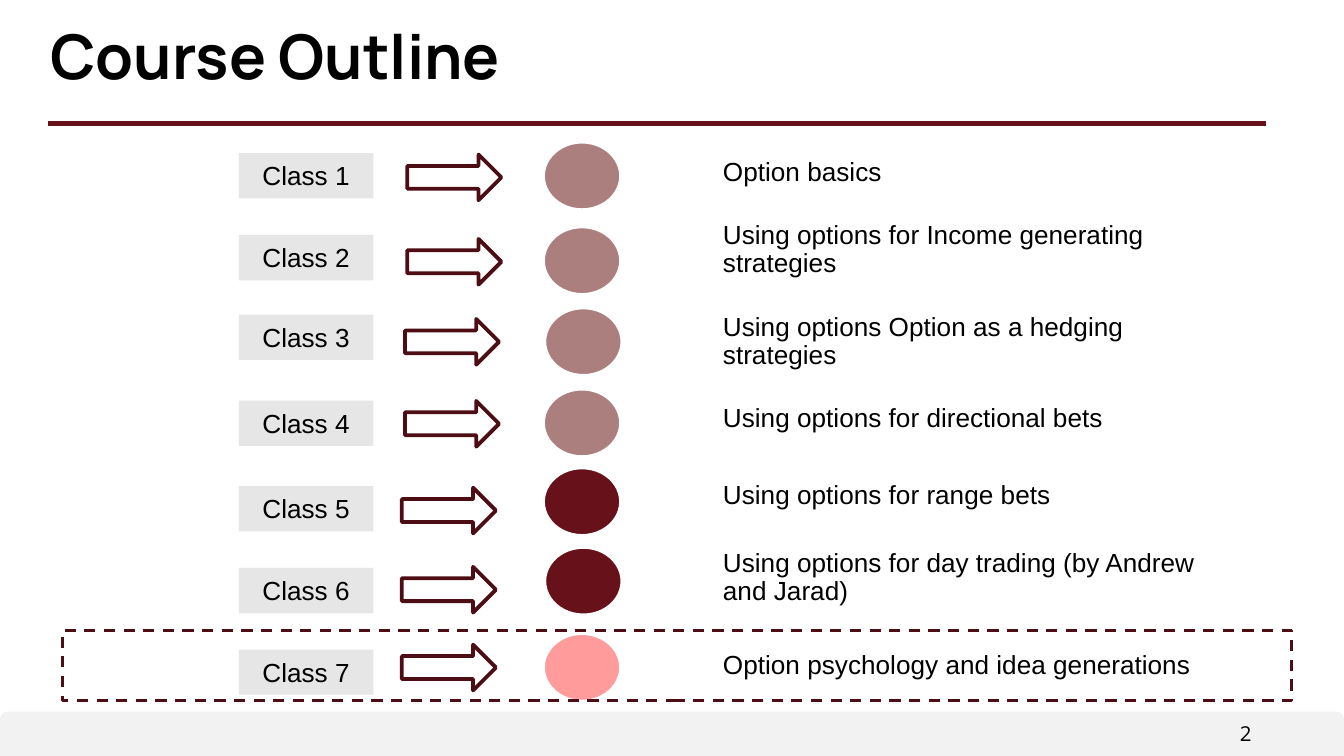
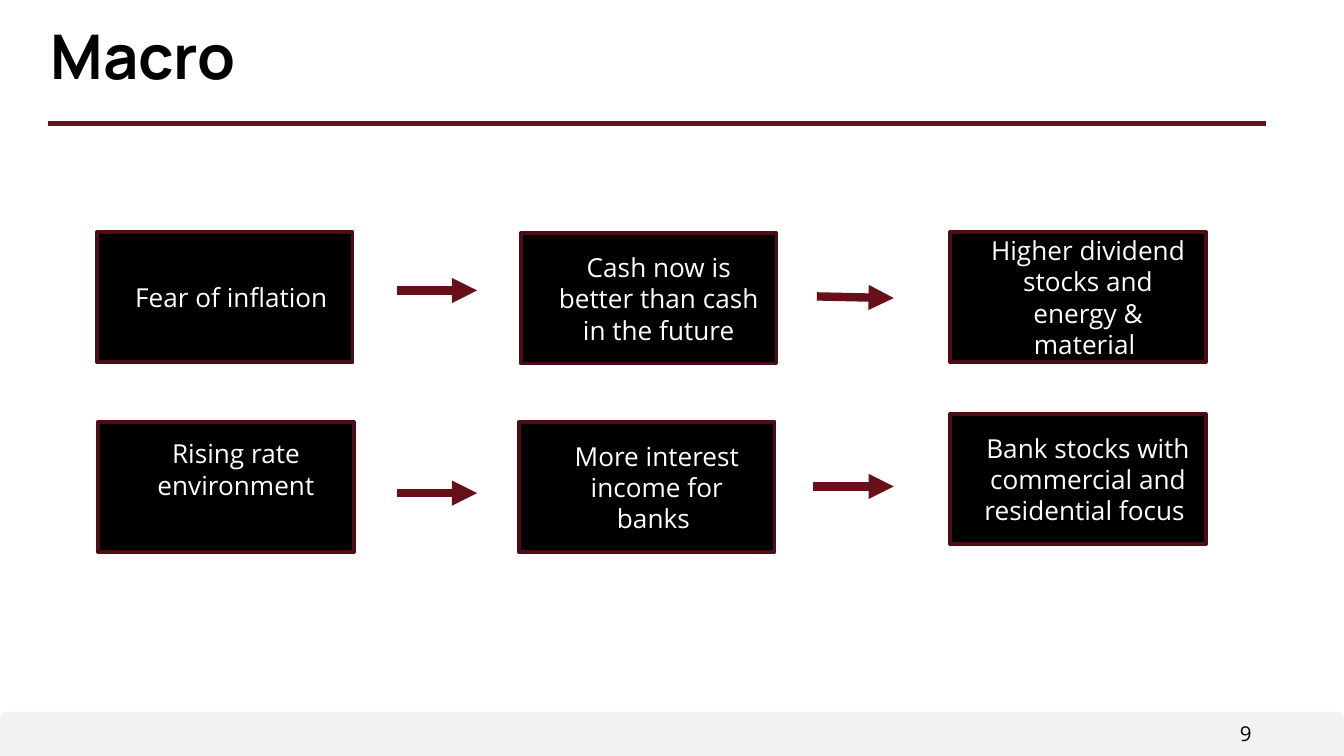
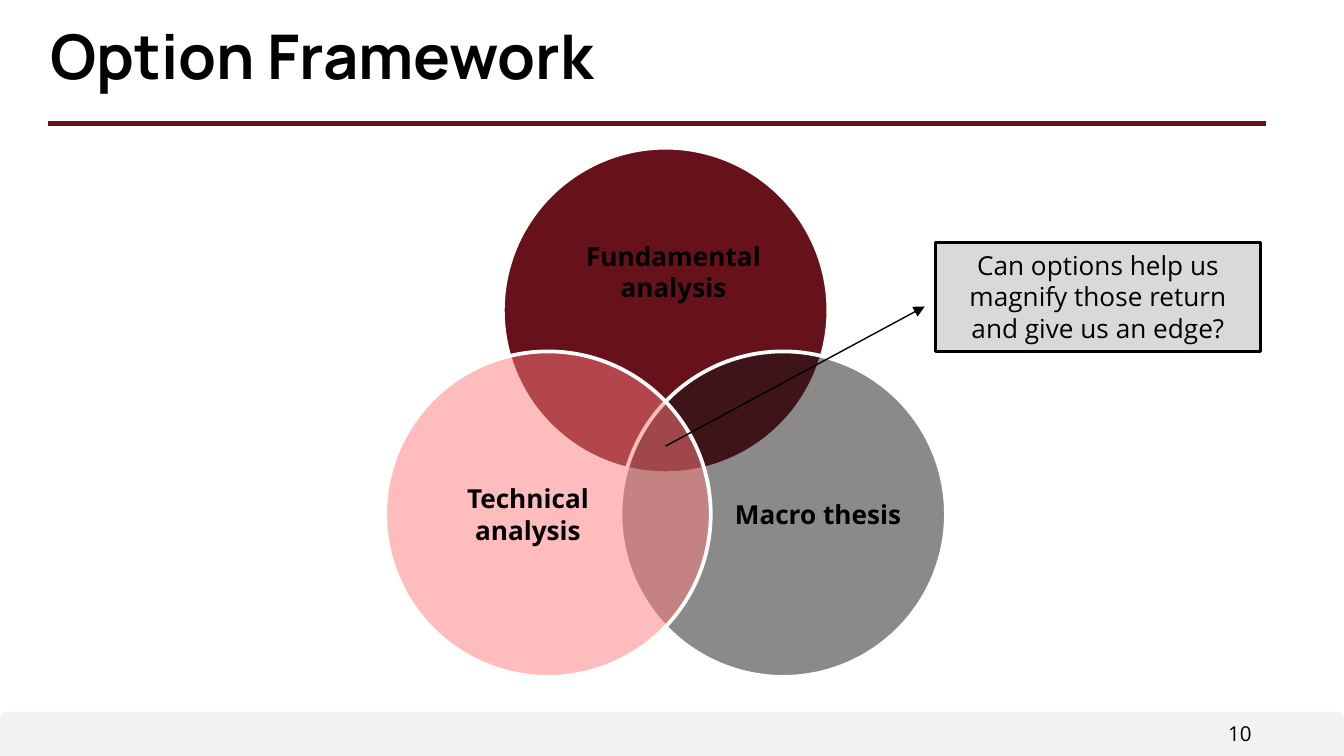
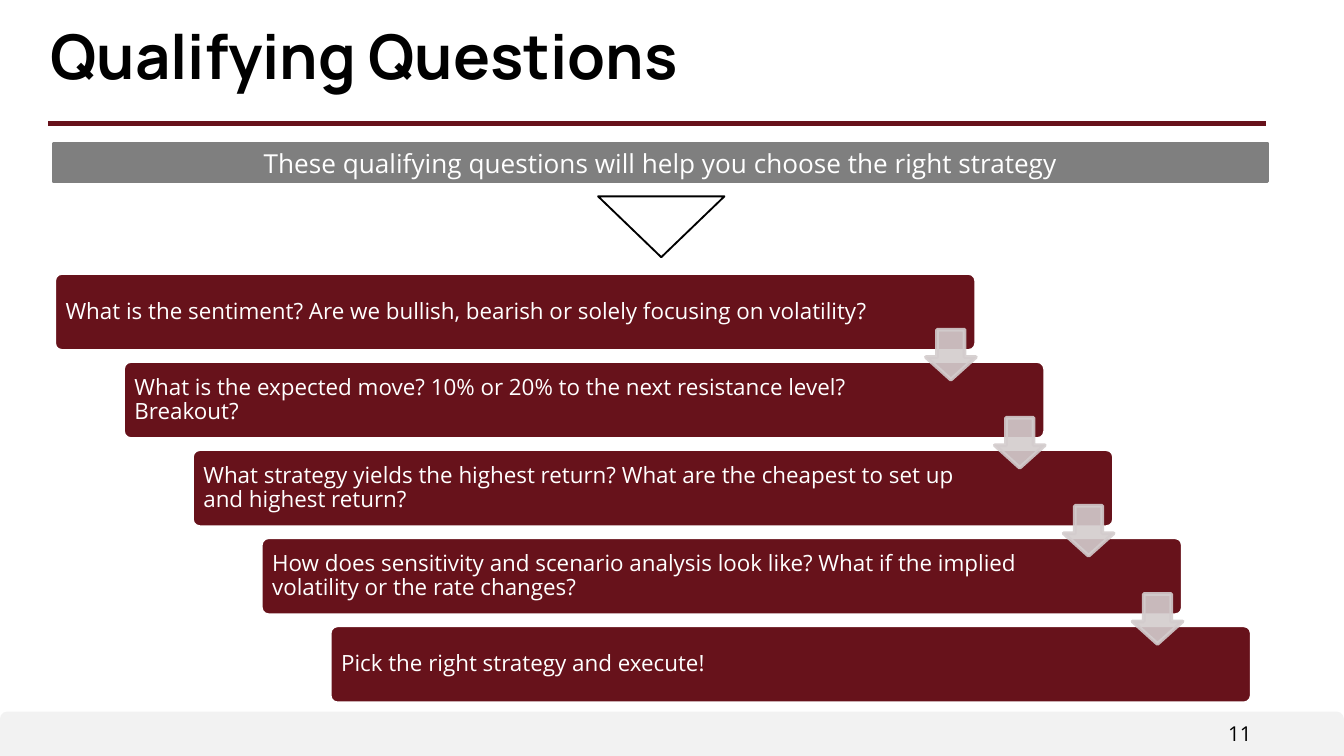
from dataclasses import dataclass
from math import cos, radians, sin

from pptx import Presentation
from pptx.dml.color import RGBColor
from pptx.enum.dml import MSO_LINE
from pptx.enum.shapes import MSO_CONNECTOR, MSO_SHAPE
from pptx.enum.text import MSO_ANCHOR, PP_ALIGN
from pptx.oxml.ns import qn
from pptx.util import Pt
from lxml.etree import SubElement


@dataclass(frozen=True)
class Theme:
    black: str = "000000"
    white: str = "FFFFFF"
    maroon: str = "67121B"
    dark_maroon: str = "4C0D14"
    arrow_maroon: str = "671019"
    oxblood: str = "5A0000"
    coral: str = "FF3939"
    pink: str = "FF7B7B"
    charcoal: str = "181717"
    footer: str = "F2F2F2"
    label: str = "E7E6E6"
    callout: str = "D9D9D9"
    banner: str = "7F7F7F"
    step_arrow: str = "D3CCCD"
    title_font: str = "Manrope"
    body_font: str = "Open Sans"
    outline_font: str = "Arial"
    title_size: int = 33
    body_size: int = 14
    step_size: int = 12
    number_size: int = 11


T = Theme()
LEFT, CENTER, RIGHT = PP_ALIGN.LEFT, PP_ALIGN.CENTER, PP_ALIGN.RIGHT
TOP, MIDDLE = MSO_ANCHOR.TOP, MSO_ANCHOR.MIDDLE
HEADER_INSETS = (5.4, 2.7, 5.4, 2.7)

# label top, arrow left, arrow top, dot left, dot top, dot colour, opacity, topic top, topic
CLASSES = [
    (82.1, 218.2, 82.8, 290.9, 75.9, T.oxblood, 50, 71.3, "Option basics"),
    (126, 218.2, 128, 290.9, 121.3, T.oxblood, 50, 112.5,
     "Using options for Income generating strategies"),
    (168.6, 217, 170.9, 291.6, 164.7, T.oxblood, 50, 161.8,
     "Using options Option as a hedging strategies"),
    (214.7, 217, 214.8, 290.9, 208.2, T.oxblood, 50, 203,
     "Using options for directional bets"),
    (260.5, 215.3, 261.3, 290.9, 250.4, T.maroon, 100, 244,
     "Using options for range bets"),
    (304.3, 215.3, 303.7, 291.6, 293, T.maroon, 100, 288,
     "Using options for day trading (by Andrew and Jarad)"),
    (348, 215.3, 345.4, 290.9, 339.2, T.coral, 50, 335.5,
     "Option psychology and idea generations"),
]

# left, top, bottom inset, text
MACRO_BOXES = [
    (51.9, 124.3, 3.6, "Fear of inflation "),
    (279, 125, 3.6, "Cash now is better than cash in the future"),
    (509, 124.2, 3.6, "Higher dividend stocks and energy & material "),
    (52.5, 226, 22.6, "Rising rate environment"),
    (278, 226, 3.6, "More interest income for banks "),
    (509, 221.8, 3.6, "Bank stocks with commercial and residential focus "),
]
MACRO_ARROWS = [
    (212.6, 155.6, 255.6, 155.6),
    (437.6, 158.8, 478.8, 159.7),
    (212.6, 264.2, 255.6, 264.2),
    (435.6, 260.6, 478.8, 260.6),
]

# angle around the centre, colour, opacity, label, label left, label top
VENN = [
    (-90, T.maroon, 100, "Fundamental analysis", 303.6, 125.3),
    (30, T.charcoal, 50, "Macro thesis", 381, 263.5),
    (150, T.pink, 50, "Technical analysis", 225.6, 255),
]
CALLOUT = "Can options help us magnify those return and give us an edge?"

BANNER = "These qualifying questions will help you choose the right strategy"
# text width, question
QUESTIONS = [
    (444, "What is the sentiment? Are we bullish, bearish or solely focusing on volatility?"),
    (427.7, "What is the expected move? 10% or 20% to the next resistance level? Breakout?"),
    (427.7, "What strategy yields the highest return? What are the cheapest to set up "
            "and highest return?"),
    (427.7, "How does sensitivity and scenario analysis look like? What if the implied "
            "volatility or the rate changes?"),
    (427.7, "Pick the right strategy and execute!"),
]


def rgb(color):
    return RGBColor.from_string(color)


def fade(fill, opacity):
    color = fill._xPr.find(qn("a:solidFill"))[0]
    SubElement(color, qn("a:alpha")).set("val", str(opacity * 1000))


def put_text(s, text, size=T.body_size, font=T.body_font, color=T.black, bold=False,
             align=LEFT, anchor=TOP, insets=(7.2, 3.6, 7.2, 3.6), spacing=None, indent=0):
    tf = s.text_frame
    tf.word_wrap = True
    tf.vertical_anchor = anchor
    tf.margin_left, tf.margin_top, tf.margin_right, tf.margin_bottom = map(Pt, insets)
    tf.text = text
    p = tf.paragraphs[0]
    p.alignment = align
    if spacing:
        p.line_spacing = spacing
    if indent:
        pPr = p._p.get_or_add_pPr()
        pPr.set("marL", str(Pt(indent)))
        pPr.set("indent", "0")
    r = p.runs[0]
    r.font.name, r.font.size, r.font.bold = font, Pt(size), bold
    r.font.color.rgb = rgb(color)


def add_text(slide, box, text, **style):
    s = slide.shapes.add_textbox(*map(Pt, box))
    put_text(s, text, **style)


def add_shape(slide, kind, box, fill=None, opacity=100, line=None, width=2):
    s = slide.shapes.add_shape(kind, *map(Pt, box))
    s.shadow.inherit = False
    if fill:
        s.fill.solid()
        s.fill.fore_color.rgb = rgb(fill)
        if opacity < 100:
            fade(s.fill, opacity)
    else:
        s.fill.background()
    if line:
        s.line.color.rgb = rgb(line)
        s.line.width = Pt(width)
    else:
        s.line.fill.background()
    return s


def add_line(slide, ends, color, width, arrow=False):
    s = slide.shapes.add_connector(MSO_CONNECTOR.STRAIGHT, *map(Pt, ends))
    s.line.color.rgb = rgb(color)
    s.line.width = Pt(width)
    if arrow:
        SubElement(s.line._get_or_add_ln(), qn("a:tailEnd")).set("type", "triangle")
    SubElement(s._element.spPr, qn("a:effectLst"))


def new_slide(prs, title, number):
    """Add a slide with the shared footer, rule and title."""
    slide = prs.slides.add_slide(prs.slide_layouts[6])
    band = add_shape(slide, MSO_SHAPE.ROUND_2_SAME_RECTANGLE, (0, 381.2, 720, 23.8), T.footer)
    band.adjustments[0], band.adjustments[1] = 0.167, 0
    add_text(slide, (584.6, 383.8, 91.4, 18), str(number), size=T.number_size,
             align=RIGHT, insets=HEADER_INSETS)
    add_line(slide, (25.9, 66.2, 678.2, 66.2), T.maroon, 2.5)
    add_text(slide, (21.6, 11.5, 670.3, 49), title, size=T.title_size, font=T.title_font,
             bold=True, insets=HEADER_INSETS, spacing=0.9)
    return slide


def course_outline(prs):
    slide = new_slide(prs, "Course Outline", 2)
    for i, row in enumerate(CLASSES, 1):
        label_y, arrow_x, arrow_y, dot_x, dot_y, color, opacity, topic_y, topic = row
        add_shape(slide, MSO_SHAPE.OVAL, (dot_x, dot_y, 41.8, 36.7), color, opacity, T.white)
        add_text(slide, (387.3, topic_y, 267, 43), topic, font=T.outline_font,
                 anchor=MIDDLE, insets=(0, 2, 0, 2), spacing=0.9)
        label = add_shape(slide, MSO_SHAPE.RECTANGLE, (128, label_y, 72, 24.2), T.label)
        put_text(label, f"Class {i}", font=T.outline_font, align=CENTER)
        add_shape(slide, MSO_SHAPE.RIGHT_ARROW, (arrow_x, arrow_y, 50.4, 24.5),
                  line=T.dark_maroon)
    current = add_shape(slide, MSO_SHAPE.RECTANGLE, (33.5, 337.7, 658.4, 37.8),
                        line=T.dark_maroon, width=1.5)
    current.line.dash_style = MSO_LINE.DASH


def macro(prs):
    slide = new_slide(prs, "Macro", 9)
    for ends in MACRO_ARROWS:
        add_line(slide, ends, T.arrow_maroon, 4.5, arrow=True)
    for x, y, bottom, text in MACRO_BOXES:
        s = add_shape(slide, MSO_SHAPE.RECTANGLE, (x, y, 137, 69.8), T.black,
                      line=T.dark_maroon)
        put_text(s, text, color=T.white, align=CENTER, anchor=MIDDLE,
                 insets=(7.2, 3.6, 7.2, bottom), indent=10.8)


def option_framework(prs):
    slide = new_slide(prs, "Option Framework", 10)
    cx, cy, orbit, radius = 356.6, 239.1, 72.75, 87.2
    for angle, color, opacity, *_ in VENN:
        x = cx + orbit * cos(radians(angle)) - radius
        y = cy + orbit * sin(radians(angle)) - radius
        add_shape(slide, MSO_SHAPE.OVAL, (x, y, 2 * radius, 2 * radius), color, opacity, T.white)
    for *_, label, x, y in VENN:
        height = 24.2 if label == "Macro thesis" else 41.2
        add_text(slide, (x, y, 114.5, height), label, bold=True, align=CENTER)
    add_line(slide, (cx, 239, 495.4, 164.2), T.black, 0.75, arrow=True)
    s = add_shape(slide, MSO_SHAPE.RECTANGLE, (501, 130, 174.5, 58.2), T.callout,
                  line=T.black, width=1.5)
    put_text(s, CALLOUT, align=CENTER)


def qualifying_questions(prs):
    slide = new_slide(prs, "Qualifying Questions", 11)
    x, y, width, height, dx, dy = 29, 146.2, 494, 41.8, 36.9, 47.2
    for i, (text_width, question) in enumerate(QUESTIONS):
        s = add_shape(slide, MSO_SHAPE.ROUNDED_RECTANGLE,
                      (x + i * dx, y + i * dy, width, height), T.maroon, line=T.white)
        s.adjustments[0] = 0.1
        put_text(s, question, size=T.step_size, color=T.white, anchor=MIDDLE, spacing=0.9,
                 insets=(4.9, 3.6, width - text_width + 2.3, 3.6))
    for i in range(len(QUESTIONS) - 1):
        s = add_shape(slide, MSO_SHAPE.DOWN_ARROW, (496 + i * dx, 176.6 + i * dy, 26.8, 26.8),
                      T.step_arrow, 90, T.step_arrow)
        s.adjustments[0], s.adjustments[1] = 0.55, 0.45
        fade(s.line.fill, 90)
    banner = add_shape(slide, MSO_SHAPE.RECTANGLE, (28.8, 77, 650.2, 20.2), T.banner,
                       line=T.banner)
    put_text(banner, BANNER, color=T.white, align=CENTER, anchor=MIDDLE)
    pointer = add_shape(slide, MSO_SHAPE.ISOSCELES_TRIANGLE, (320.4, 105.2, 67.7, 32.6),
                        line=T.black, width=1)
    pointer.rotation = 180


def main():
    prs = Presentation()
    prs.slide_width, prs.slide_height = Pt(720), Pt(405)
    for build in (course_outline, macro, option_framework, qualifying_questions):
        build(prs)
    prs.save("out.pptx")


if __name__ == "__main__":
    main()
